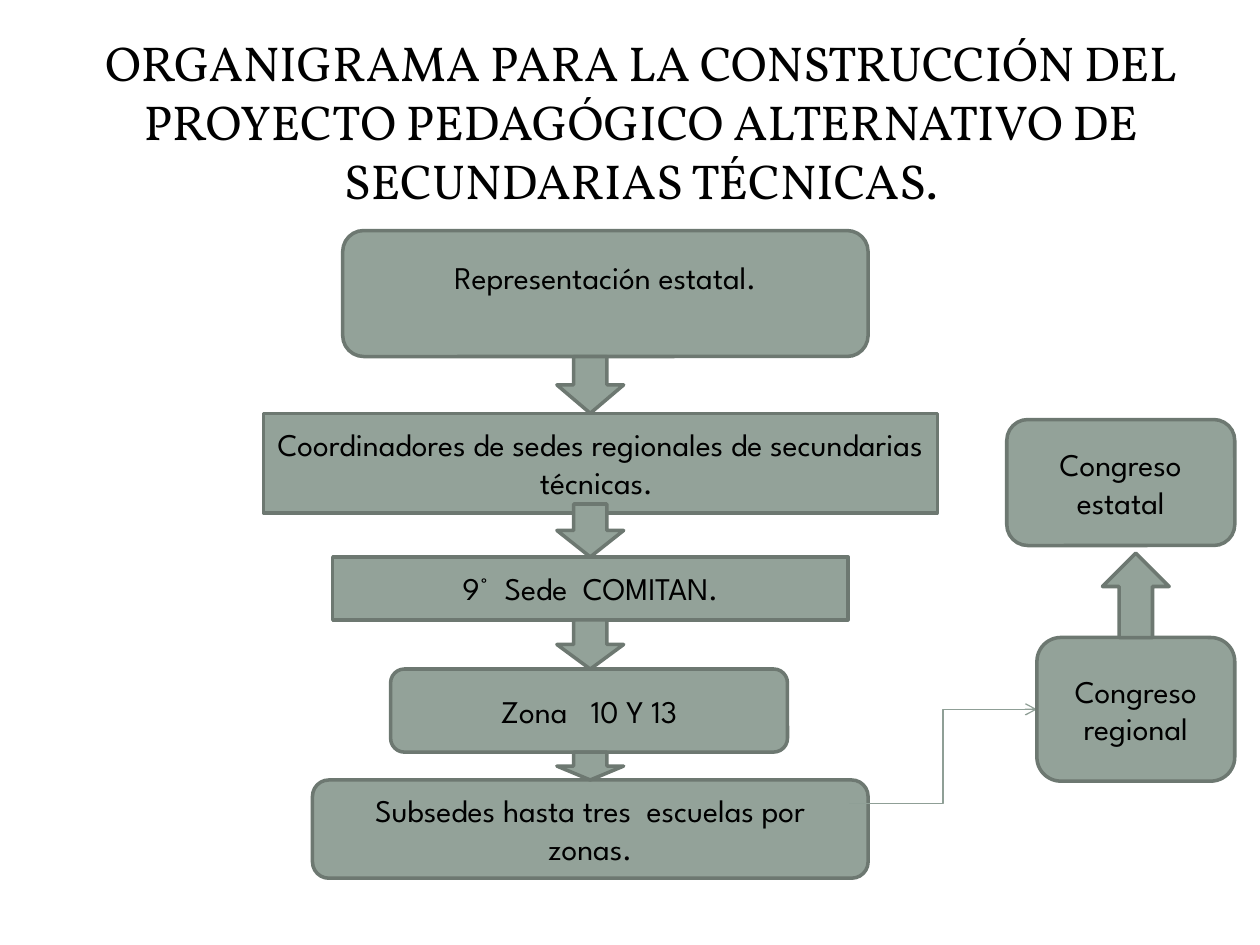
import pptx
import pptx.util
import pptx.dml.color
import pptx.enum.shapes
import pptx.enum.text
import pptx.oxml.ns
import lxml.etree

HUES = {"paper": "FFFFFF", "fill": "93A299", "edge": "6D7871",
        "link": "8F9F96", "ink": "000000"}
HEAD, BODY = "Vollkorn", "League Spartan"
TITLE = ("ORGANIGRAMA PARA LA CONSTRUCCIÓN DEL PROYECTO PEDAGÓGICO "
         "ALTERNATIVO DE SECUNDARIAS TÉCNICAS.")
KIND = pptx.enum.shapes.MSO_SHAPE
ROUND, RECT = KIND.ROUNDED_RECTANGLE, KIND.RECTANGLE
WIDE, HIGH = 10, 7.5
AXIS, SPAN = 4.42, 0.53
RIGHT = 9.8

CHAIN = [
    ("Representación estatal.", ROUND, 2.72, 1.83, 4.17, 1),
    ("Coordinadores de sedes regionales de secundarias  técnicas.  ",
     RECT, 2.09, 3.28, 5.35, 0.79),
    ("9°  Sede  COMITAN.", RECT, 2.64, 4.42, 4.09, 0.5),
    ("Zona   10 Y 13", ROUND, 3.1, 5.31, 3.15, 0.66),
    ("Subsedes hasta tres  escuelas por zonas.", ROUND, 2.48, 6.19, 4.41, 0.78),
]
SIDE = [
    ("Congreso regional", 5.06, 1.57, 1.14),
    ("Congreso estatal", 3.33, 1.81, 1),
]
LAPS = [0, 0.07, 0, 0]


def inch(*nums):
    return [pptx.util.Inches(n) for n in nums]


def hue(name):
    return pptx.dml.color.RGBColor.from_string(HUES[name])


def write(shape, text, font, size):
    frame = shape.text_frame
    frame.word_wrap = True
    frame.vertical_anchor = pptx.enum.text.MSO_ANCHOR.MIDDLE
    frame.text = text
    para = frame.paragraphs[0]
    para.alignment = pptx.enum.text.PP_ALIGN.CENTER
    face = para.runs[0].font
    face.name, face.size = font, pptx.util.Pt(size)
    face.color.rgb = hue("ink")


def draw(kind, *area):
    shape = slide.shapes.add_shape(kind, *inch(*area))
    shape.shadow.inherit = False
    shape.fill.solid()
    shape.fill.fore_color.rgb = hue("fill")
    shape.line.color.rgb = hue("edge")
    shape.line.width = pptx.util.Pt(2)
    return shape


def box(text, kind, *area):
    shape = draw(kind, *area)
    write(shape, text, BODY, 18)
    return shape


deck = pptx.Presentation()
deck.slide_width, deck.slide_height = inch(WIDE, HIGH)
slide = deck.slides.add_slide(deck.slide_layouts[6])
slide.background.fill.solid()
slide.background.fill.fore_color.rgb = hue("paper")

title = slide.shapes.add_textbox(*inch(0.28, 0.21, 9.61, 1.5))
write(title, TITLE, HEAD, 28)

steps = [box(*row) for row in CHAIN]
steps[0].text_frame.margin_bottom = pptx.util.Inches(0.32)
for prev, after, lap in zip(CHAIN, CHAIN[1:], LAPS):
    top = prev[3] + prev[5] - lap
    draw(KIND.DOWN_ARROW, AXIS, top, SPAN, after[3] - top)

local, state = [box(text, ROUND, RIGHT - wide, top, wide, high)
                for text, top, wide, high in SIDE]
draw(KIND.UP_ARROW, 8.75, 4.39, SPAN, 0.67)

link = slide.shapes.add_connector(
    pptx.enum.shapes.MSO_CONNECTOR.ELBOW, *inch(6.74, 6.38, 8.23, 5.63))
link.end_connect(local, 1)
link.line.color.rgb = hue("link")
link.line.width = pptx.util.Pt(0.75)
name = pptx.oxml.ns.qn
lxml.etree.SubElement(link.line._get_or_add_ln(), name("a:tailEnd"), type="arrow")
lxml.etree.SubElement(link._element.spPr, name("a:effectLst"))
tree = slide.shapes._spTree
tree.remove(link._element)
tree.insert(tree.index(local._element), link._element)

deck.save("out.pptx")
